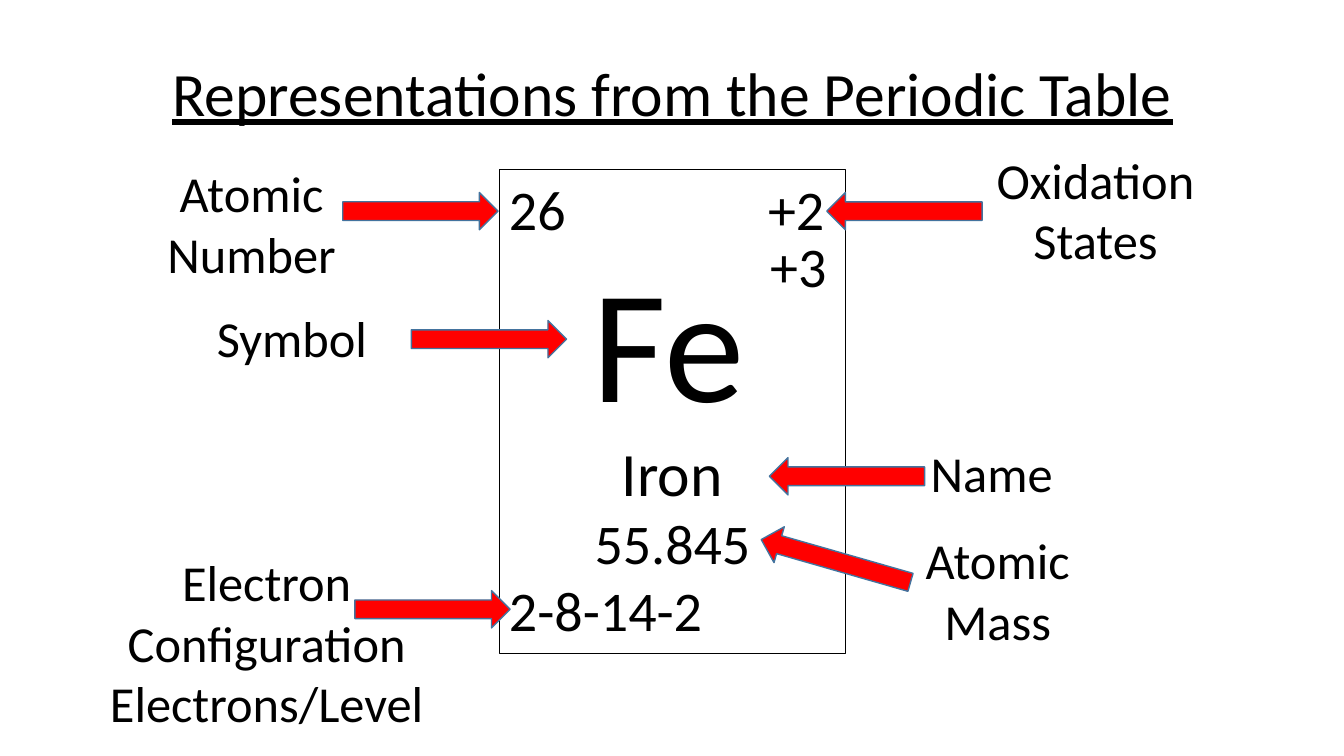
from dataclasses import dataclass

from lxml import etree
from pptx import Presentation
from pptx.dml.color import RGBColor
from pptx.enum.shapes import MSO_SHAPE
from pptx.enum.text import MSO_ANCHOR, MSO_AUTO_SIZE, PP_ALIGN
from pptx.oxml.ns import qn
from pptx.util import Pt

RECTANGLE, RIGHT_ARROW = MSO_SHAPE.RECTANGLE, MSO_SHAPE.RIGHT_ARROW
LEFT, CENTER = PP_ALIGN.LEFT, PP_ALIGN.CENTER
TOP, MIDDLE = MSO_ANCHOR.TOP, MSO_ANCHOR.MIDDLE
FIT_SHAPE, NO_FIT = MSO_AUTO_SIZE.SHAPE_TO_FIT_TEXT, MSO_AUTO_SIZE.NONE
TITLE_ONLY = 5
EMU_PER_PX = 9144


@dataclass(frozen=True)
class Theme:
    font: str = "Calibri"
    ink: RGBColor = RGBColor(0, 0, 0)
    paper: RGBColor = RGBColor(255, 255, 255)
    arrow: RGBColor = RGBColor(255, 0, 0)
    arrow_edge: RGBColor = RGBColor(0x43, 0x73, 0x9E)
    heading: int = 44
    symbol: int = 115
    value: int = 40
    label: int = 36


THEME = Theme()

ARROW_SIZE = (154, 37)
ARROWS = [
    (340, 191, 0),
    (408, 318, 0),
    (352, 586, 0),
    (820, 191, 180),
    (763, 454, 180),
    (752, 538, 196),
]
LABELS = [
    (["Oxidation", "States"], (962, 143, 249, 131)),
    (["Name"], (859, 434, 249, 71)),
    (["Atomic Mass"], (865, 520, 249, 131)),
    (["Atomic Number"], (125, 156, 249, 131)),
    (["Symbol"], (165, 300, 249, 71)),
    (["Electron", "Configuration", "Electrons/Level"], (90, 542, 349, 192)),
]


def px(length):
    return length * EMU_PER_PX


def style(paragraph, size, align):
    paragraph.alignment = align
    paragraph.font.name = THEME.font
    paragraph.font.size = Pt(size)
    paragraph.font.color.rgb = THEME.ink


def write_lines(frame, lines):
    frame.word_wrap = True
    frame.auto_size = FIT_SHAPE
    frame.vertical_anchor = TOP
    frame.text = "\n".join(text for text, _, _ in lines)
    for paragraph, (_, size, align) in zip(frame.paragraphs, lines):
        style(paragraph, size, align)


def add_title(slide, text, box):
    title = slide.shapes.title
    title.left, title.top, title.width, title.height = map(px, box)
    frame = title.text_frame
    frame.text = text
    frame.auto_size = NO_FIT
    frame.vertical_anchor = MIDDLE
    heading = frame.paragraphs[0]
    style(heading, THEME.heading, CENTER)
    heading.line_spacing = 0.9
    heading.font.underline = True


def add_outlined(slide, kind, box, fill, edge, weight):
    shape = slide.shapes.add_shape(kind, *map(px, box))
    shape.shadow.inherit = False
    shape.fill.solid()
    shape.fill.fore_color.rgb = fill
    shape.line.color.rgb = edge
    shape.line.width = Pt(weight)
    return shape


def set_tab(paragraph, position):
    properties = paragraph._p.get_or_add_pPr()
    tabs = etree.Element(qn("a:tabLst"))
    etree.SubElement(tabs, qn("a:tab"), pos=str(px(position)), algn="l")
    properties.find(qn("a:defRPr")).addprevious(tabs)


def set_indent(paragraph, indent):
    properties = paragraph._p.get_or_add_pPr()
    properties.set("marL", str(px(indent)))
    properties.set("indent", "0")


def add_element_card(slide):
    card = add_outlined(slide, RECTANGLE, (495, 168, 344, 480),
                        THEME.paper, THEME.ink, 0.75)
    write_lines(card.text_frame, [
        ("26\t+2", THEME.value, LEFT),
        ("Fe", THEME.symbol, LEFT),
        ("Iron", THEME.heading, CENTER),
        ("55.845", THEME.value, CENTER),
        ("2-8-14-2", THEME.value, LEFT),
    ])
    number_and_state, symbol = card.text_frame.paragraphs[:2]
    set_tab(number_and_state, 257)
    set_indent(symbol, 83)


def add_arrow(slide, left, top, rotation):
    arrow = add_outlined(slide, RIGHT_ARROW, (left, top, *ARROW_SIZE),
                         THEME.arrow, THEME.arrow_edge, 1)
    arrow.rotation = rotation


def add_text(slide, lines, box, size, align):
    label = slide.shapes.add_textbox(*map(px, box))
    write_lines(label.text_frame, [(line, size, align) for line in lines])


def main():
    deck = Presentation()
    deck.slide_width, deck.slide_height = px(1333), px(750)
    slide = deck.slides.add_slide(deck.slide_layouts[TITLE_ONLY])
    add_title(slide, "Representations from the Periodic Table", (92, 23, 1150, 145))
    add_element_card(slide)
    for left, top, rotation in ARROWS:
        add_arrow(slide, left, top, rotation)
    for lines, box in LABELS:
        add_text(slide, lines, box, THEME.label, CENTER)
    add_text(slide, ["+3"], (754, 225, 95, 77), THEME.value, LEFT)
    deck.save("out.pptx")


if __name__ == "__main__":
    main()
